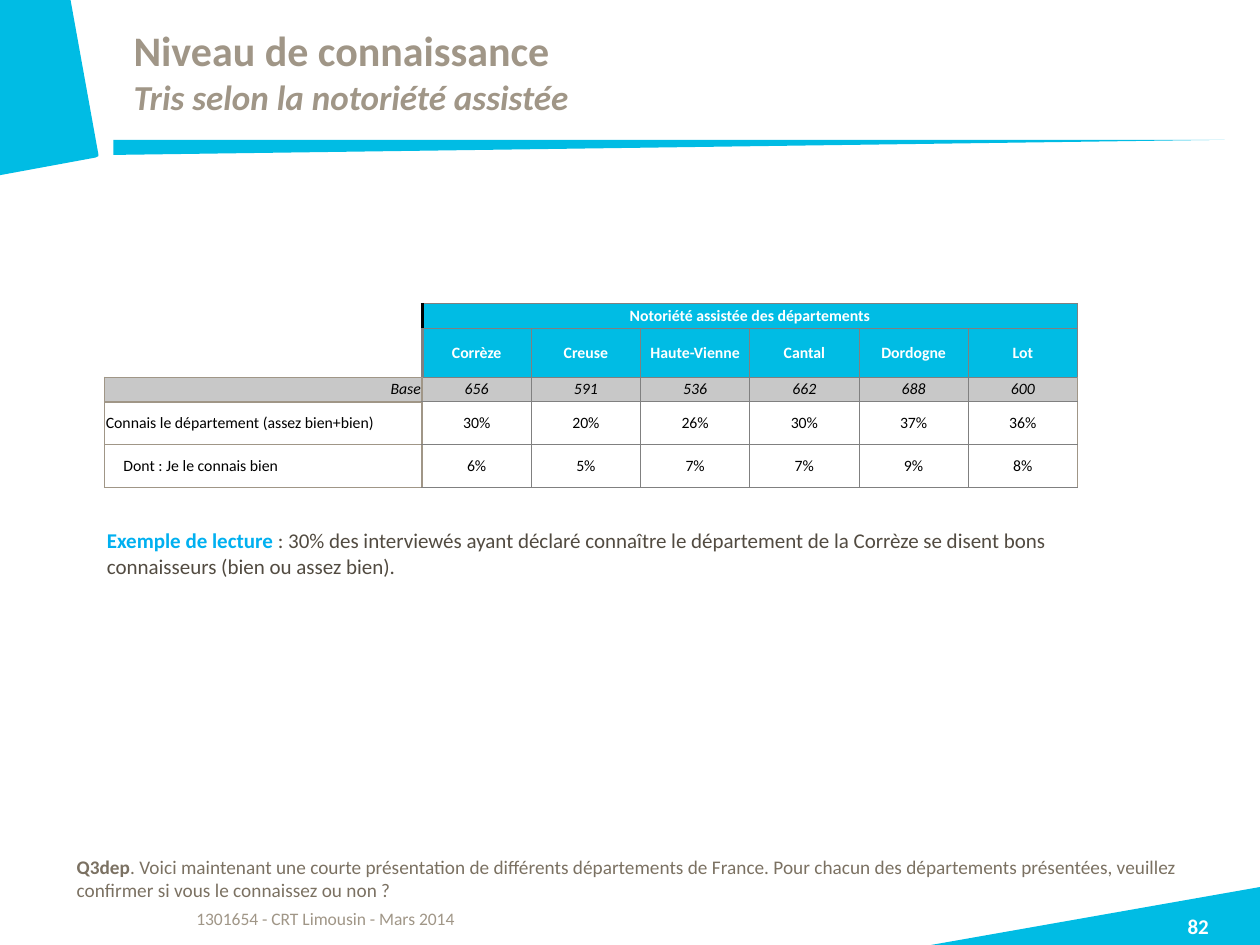
from lxml.etree import SubElement as Sub
from pptx import Presentation
from pptx.dml.color import RGBColor as RGB
from pptx.enum.shapes import MSO_SHAPE as Kind
from pptx.enum.text import MSO_ANCHOR as Anchor, MSO_AUTO_SIZE as Auto, PP_ALIGN as Align
from pptx.oxml.ns import qn
from pptx.util import Inches, Pt

BLUE, SKY = RGB(0x00, 0xBC, 0xE4), RGB(0x00, 0xB0, 0xF0)
TAN, TAUPE, DARK = RGB(0xA0, 0x96, 0x87), RGB(0x7B, 0x71, 0x62), RGB(0x52, 0x4B, 0x41)
GRAY, PALE = RGB(0x80, 0x80, 0x80), RGB(0xC8, 0xC8, 0xC8)
WHITE, BLACK = RGB(0xFF, 0xFF, 0xFF), RGB(0, 0, 0)
FONT = "Calibri"

# Content: each run is (text, format)
TITLE = [
    ("Niveau de connaissance", dict(size=24, color=TAN, bold=True)),
    ("Tris selon la notoriété assistée", dict(size=20, color=TAN, bold=True, italic=True)),
]
GROUP = "Notoriété assistée des départements"
DEPTS = ["Corrèze", "Creuse", "Haute-Vienne", "Cantal", "Dordogne", "Lot"]
DATA = [
    ["Base", "656", "591", "536", "662", "688", "600"],
    ["Connais le département (assez bien+bien)", "30%", "20%", "26%", "30%", "37%", "36%"],
    ["Dont : Je le connais bien", "6%", "5%", "7%", "7%", "9%", "8%"],
]
NOTES = [  # box, runs, alignment, has default margins
    ((1.46, 7.16, 6.77, 0.34),
     [("1301654 - CRT Limousin - Mars 2014", dict(size=10, color=TAN))], Align.LEFT, True),
    ((9.02, 7.25, 0.98, 0.25),
     [("82", dict(size=12, color=WHITE, bold=True))], Align.CENTER, False),
    ((0.51, 6.74, 9.49, 0.47),
     [("Q3dep", dict(size=11, color=TAUPE, bold=True)),
      (". Voici maintenant une courte présentation de différents départements de France. "
       "Pour chacun des départements présentées, veuillez confirmer si vous le connaissez ou non ?",
       dict(size=11, color=TAUPE))], Align.LEFT, True),
    ((0.75, 4.14, 8.27, 0.51),
     [("Exemple de lecture ", dict(size=12, color=SKY, bold=True)),
      (": 30% des interviewés ayant déclaré connaître le département de la Corrèze "
       "se disent bons connaisseurs (bien ou assez bien).", dict(size=12, color=DARK))],
     Align.LEFT, True),
]
# Outlines in hundredths of an inch
WEDGES = [
    [(739, 750), (1000, 704), (1000, 750)],
    [(0, 139), (0, 0), (56, 0), (78, 122), (78, 124), (76, 125)],
]
HEAD, BODY = 3, len(DATA)  # header rows, data rows
COLS = [2.52] + [0.867] * len(DEPTS)
ROWS = [0.195] * 4 + [0.34] * 2


def add_run(para, text, form):
    run = para.add_run()
    run.text = text
    form = {"name": FONT, "bold": False, "italic": False, **form}
    run.font.color.rgb = form.pop("color")
    run.font.size = Pt(form.pop("size"))
    for key, val in form.items():
        setattr(run.font, key, val)


def no_inset(part):
    for side in ("left", "right", "top", "bottom"):
        setattr(part, "margin_" + side, 0)


def paint(shape):
    shape.shadow.inherit = False
    shape.fill.solid()
    shape.fill.fore_color.rgb = BLUE
    shape.line.fill.background()


def rule_v(row, x):
    """Line on the left of column x."""
    if x == 0:
        return None if row < HEAD else (TAN, 1)
    if x == 1 and row < HEAD:
        return (BLACK if row == 0 else GRAY, 2)
    if x in (1, len(COLS)):
        return (GRAY if row < HEAD else TAN, 1)
    return (GRAY, 0.5)


def rule_h(col, y):
    """Line on top of row y."""
    if col == 0:
        return None if y < HEAD else (TAN, 1)
    return (GRAY, 1 if y in (0, HEAD) else 0.5)


def border(cell, tag, rule):
    line = Sub(cell._tc.get_or_add_tcPr(), qn("a:" + tag))
    if rule is None:
        Sub(line, qn("a:noFill"))
        return
    color, width = rule
    line.set("w", str(Pt(width)))
    Sub(Sub(line, qn("a:solidFill")), qn("a:srgbClr")).set("val", str(color))


def style(cell, row, col):
    down = row + (cell.span_height if cell.is_merge_origin else 1)
    right = col + (cell.span_width if cell.is_merge_origin else 1)
    for tag, rule in (("lnL", rule_v(row, col)), ("lnR", rule_v(row, right)),
                      ("lnT", rule_h(col, row)), ("lnB", rule_h(col, down))):
        border(cell, tag, rule)
    fill = BLUE if row < HEAD and col else PALE if row == HEAD else None
    if fill is None:
        cell.fill.background()
    else:
        cell.fill.solid()
        cell.fill.fore_color.rgb = fill


def add_table(slide):
    size = (len(ROWS), len(COLS))
    box = map(Inches, (0.83, 2.41, sum(COLS), sum(ROWS)))
    table = slide.shapes.add_table(*size, *box).table
    table.first_row = table.horz_banding = False
    for col, width in zip(table.columns, COLS):
        col.width = Inches(width)
    for row, high in zip(table.rows, ROWS):
        row.height = Inches(high)

    # Merged header cells
    table.cell(0, 0).merge(table.cell(1, 0))
    table.cell(0, 1).merge(table.cell(0, len(DEPTS)))
    for c in range(1, len(COLS)):
        table.cell(1, c).merge(table.cell(2, c))

    texts = {(0, 1): GROUP}
    texts.update({(1, c): name for c, name in enumerate(DEPTS, 1)})
    texts.update({(r, c): text for r, line in enumerate(DATA, HEAD)
                  for c, text in enumerate(line)})
    for r in range(size[0]):
        for c in range(size[1]):
            cell = table.cell(r, c)
            no_inset(cell)
            cell.margin_left = cell.margin_right = Inches(0.01)
            cell.vertical_anchor = Anchor.MIDDLE
            para = cell.text_frame.paragraphs[0]
            if (r, c) in texts:
                para.alignment = (Align.CENTER if c else
                                  Align.RIGHT if r == HEAD else Align.LEFT)
                add_run(para, texts[r, c], dict(
                    size=9, color=WHITE if r < HEAD else BLACK,
                    bold=r < HEAD, italic=r == HEAD))
            else:
                para._p.get_or_add_endParaRPr().set("sz", "900")
            if not cell.is_spanned:
                style(cell, r, c)
    table.cell(HEAD + BODY - 1, 0).margin_left = Inches(0.15)


def main():
    deck = Presentation()
    deck.slide_width, deck.slide_height = Inches(10), Inches(7.5)
    slide = deck.slides.add_slide(deck.slide_layouts[5])
    shapes = slide.shapes

    # Corner wedges and tapering bar
    for first, *rest in WEDGES:
        pen = shapes.build_freeform(*first, scale=Inches(0.01))
        pen.add_line_segments(rest, close=True)
        paint(pen.convert_to_shape())
    bar = shapes.add_shape(Kind.RIGHT_TRIANGLE, *map(Inches, (0.9, 1.11, 8.82, 0.12)))
    bar._element.spPr.xfrm.set("flipV", "1")
    paint(bar)

    # Title
    title = shapes.title
    title.left, title.top, title.width, title.height = map(Inches, (1.06, 0.13, 8.66, 0.87))
    frame = title.text_frame
    no_inset(frame)
    frame.auto_size, frame.vertical_anchor = Auto.NONE, Anchor.MIDDLE
    para = frame.paragraphs[0]
    para.alignment = Align.LEFT
    for i, (text, form) in enumerate(TITLE):
        if i:
            para.add_line_break()
        add_run(para, text, form)

    add_table(slide)

    # Notes, footer and page number
    for box, runs, align, inset in NOTES:
        frame = shapes.add_textbox(*map(Inches, box)).text_frame
        frame.word_wrap = True
        if not inset:
            no_inset(frame)
        para = frame.paragraphs[0]
        para.alignment = align
        for text, form in runs:
            add_run(para, text, form)

    deck.save("out.pptx")


if __name__ == "__main__":
    main()
